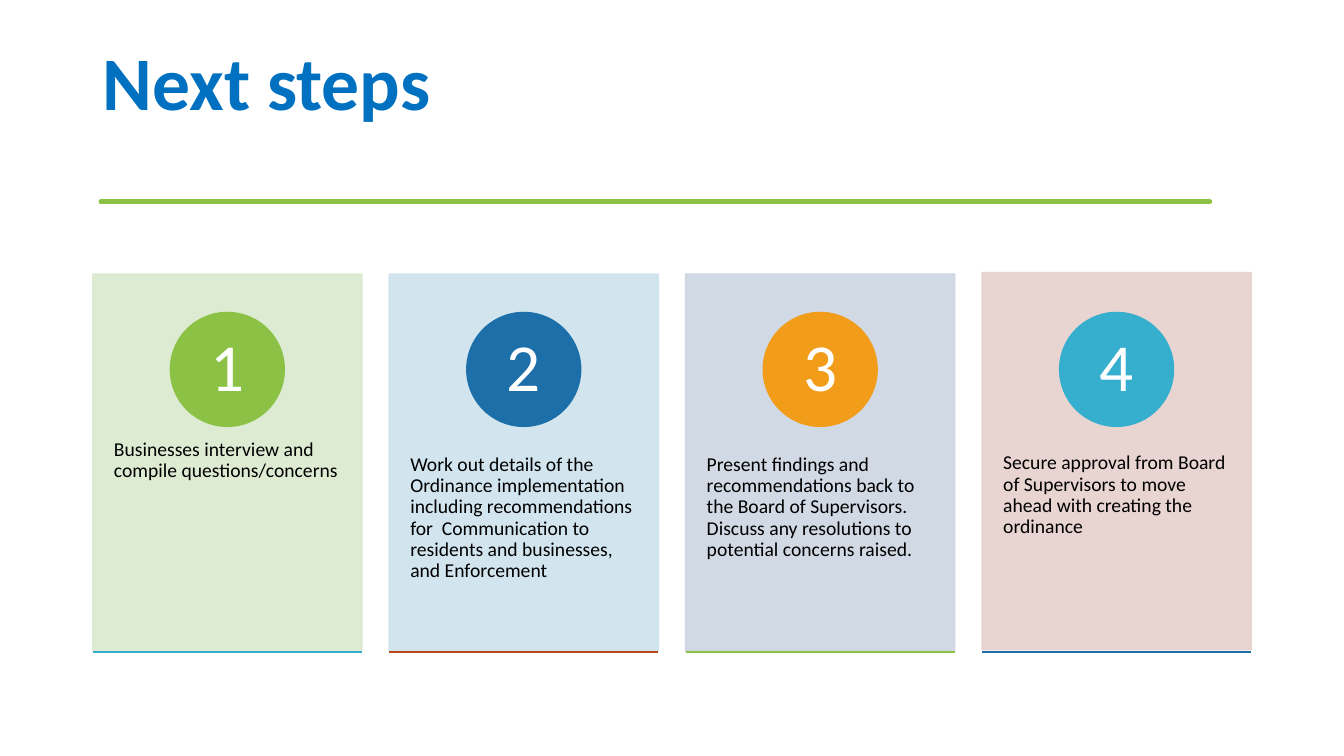
from lxml.etree import SubElement
from pptx import Presentation
from pptx.dml.color import RGBColor
from pptx.enum.shapes import MSO_CONNECTOR as Line, MSO_SHAPE as Kind
from pptx.enum.text import MSO_ANCHOR as Anchor, PP_ALIGN as Align
from pptx.oxml.ns import qn
from pptx.util import Inches, Pt

BLUE = RGBColor(0x00, 0x70, 0xC0)
BLACK = RGBColor(0x00, 0x00, 0x00)
WHITE = RGBColor(0xFF, 0xFF, 0xFF)
GREEN = RGBColor(0x8B, 0xC1, 0x45)
NAVY = RGBColor(0x1D, 0x6F, 0xA9)
AMBER = RGBColor(0xF1, 0x9D, 0x19)
AQUA = RGBColor(0x36, 0xAF, 0xCE)
RUST = RGBColor(0xB7, 0x49, 0x19)
MINT = RGBColor(0xDA, 0xE9, 0xCF)
SKY = RGBColor(0xCE, 0xE3, 0xED)
SLATE = RGBColor(0xCD, 0xD5, 0xE2)
ROSE = RGBColor(0xE6, 0xD0, 0xCC)

TITLE = "Next steps"
STEPS = [
    ("Businesses interview and compile questions/concerns", MINT, GREEN, AQUA, 0),
    ("Work out details of the Ordinance implementation including recommendations "
     "for  Communication to residents and businesses, and Enforcement", SKY, NAVY, RUST, 0),
    ("Present findings and recommendations back to the Board of Supervisors. "
     "Discuss any resolutions to potential concerns raised.", SLATE, AMBER, GREEN, 0),
    ("Secure approval from Board of Supervisors to move ahead with creating "
     "the ordinance", ROSE, AQUA, NAVY, 0.015),
]
STROKE = [
    (0.92, 2.04, 2.06), (1.5, 2.03, 2.07), (1.95, 2.04, 2.06), (2.37, 2.04, 2.06),
    (2.8, 2.04, 2.06), (3.3, 2.03, 2.05), (3.7, 2.03, 2.06), (4, 2.04, 2.08),
    (4.45, 2.04, 2.06), (5.25, 2.03, 2.05), (5.75, 2.04, 2.07), (5.95, 2.03, 2.06),
    (6.4, 2.03, 2.06), (6.95, 2.02, 2.06), (7.5, 2.04, 2.06), (7.8, 2.04, 2.06),
    (8.15, 2.03, 2.05), (8.6, 2.04, 2.08), (8.95, 2.04, 2.07), (9.5, 2.03, 2.05),
    (10.2, 2.04, 2.06), (10.75, 2.04, 2.06), (11.3, 2.03, 2.07), (11.75, 2.04, 2.05),
    (12.32, 2.04, 2.06),
]
WIDE, HIGH = 13.33, 7.5
LEFT, PITCH = 0.92, 2.94
CARD, TALL, TOP = 2.67, 3.74, 2.72
DISC, DROP = 1.13, 0.38
BODY = 1.43


def clear(fill, share):
    tone = fill._xPr.find(qn("a:solidFill"))[0]
    SubElement(tone, qn("a:alpha"), val=str(share * 1000))


def paint(shape, tone, width=1):
    shape.shadow.inherit = False
    shape.fill.solid()
    shape.fill.fore_color.rgb = tone
    shape.line.color.rgb = tone
    shape.line.width = Pt(width)
    return shape


def write(shape, text, size, tone, pads, bold=False, align=Align.LEFT, anchor=Anchor.TOP):
    frame = shape.text_frame
    frame.word_wrap = True
    frame.vertical_anchor = anchor
    frame.margin_left = frame.margin_right = Inches(pads[0])
    frame.margin_top = frame.margin_bottom = Inches(pads[1])
    para = frame.paragraphs[0]
    para.alignment = align
    para.line_spacing = 0.9
    run = para.add_run()
    run.text = text
    font = run.font
    font.name, font.size, font.bold = "Calibri", Pt(size), bold
    font.color.rgb = tone


def box(shapes, *rect):
    return shapes.add_textbox(*map(Inches, rect))


def stroke(shapes):
    edge = [(x, up) for x, up, low in STROKE]
    edge += [(x, low) for x, up, low in reversed(STROKE)]
    pen = shapes.build_freeform(*edge[0], scale=Inches(1))
    pen.add_line_segments(edge[1:], close=True)
    paint(pen.convert_to_shape(), GREEN, 3.25)


def step(shapes, spot, text, pale, deep, base, lift):
    x, y = LEFT + spot * PITCH, TOP - lift
    card = shapes.add_shape(Kind.RECTANGLE, *map(Inches, (x, y, CARD, TALL)))
    paint(card, pale)
    clear(card.fill, 90)
    clear(card.line.fill, 90)
    write(box(shapes, x, y + BODY, CARD, TALL * 0.6), text, 14, BLACK, (0.21, 0.36))
    mid = x + (CARD - DISC) / 2
    disc = shapes.add_shape(Kind.OVAL, *map(Inches, (mid, TOP + DROP, DISC, DISC)))
    paint(disc, deep)
    write(disc, str(spot + 1), 48, WHITE, (0.09, 0.01), align=Align.CENTER, anchor=Anchor.MIDDLE)
    foot = TOP + TALL + 0.01
    rule = shapes.add_connector(Line.STRAIGHT, *map(Inches, (x, foot, x + CARD, foot)))
    rule.line.color.rgb = base
    rule.line.width = Pt(1)
    SubElement(rule._element.spPr, qn("a:effectLst"))


def main():
    """Build the next steps slide with four numbered cards."""
    deck = Presentation()
    deck.slide_width, deck.slide_height = Inches(WIDE), Inches(HIGH)
    shapes = deck.slides.add_slide(deck.slide_layouts[6]).shapes
    write(box(shapes, LEFT, 0.4, 11.5, 1.45), TITLE, 54, BLUE, (0.1, 0.05), bold=True)
    stroke(shapes)
    for spot, row in enumerate(STEPS):
        step(shapes, spot, *row)
    deck.save("out.pptx")


if __name__ == "__main__":
    main()
